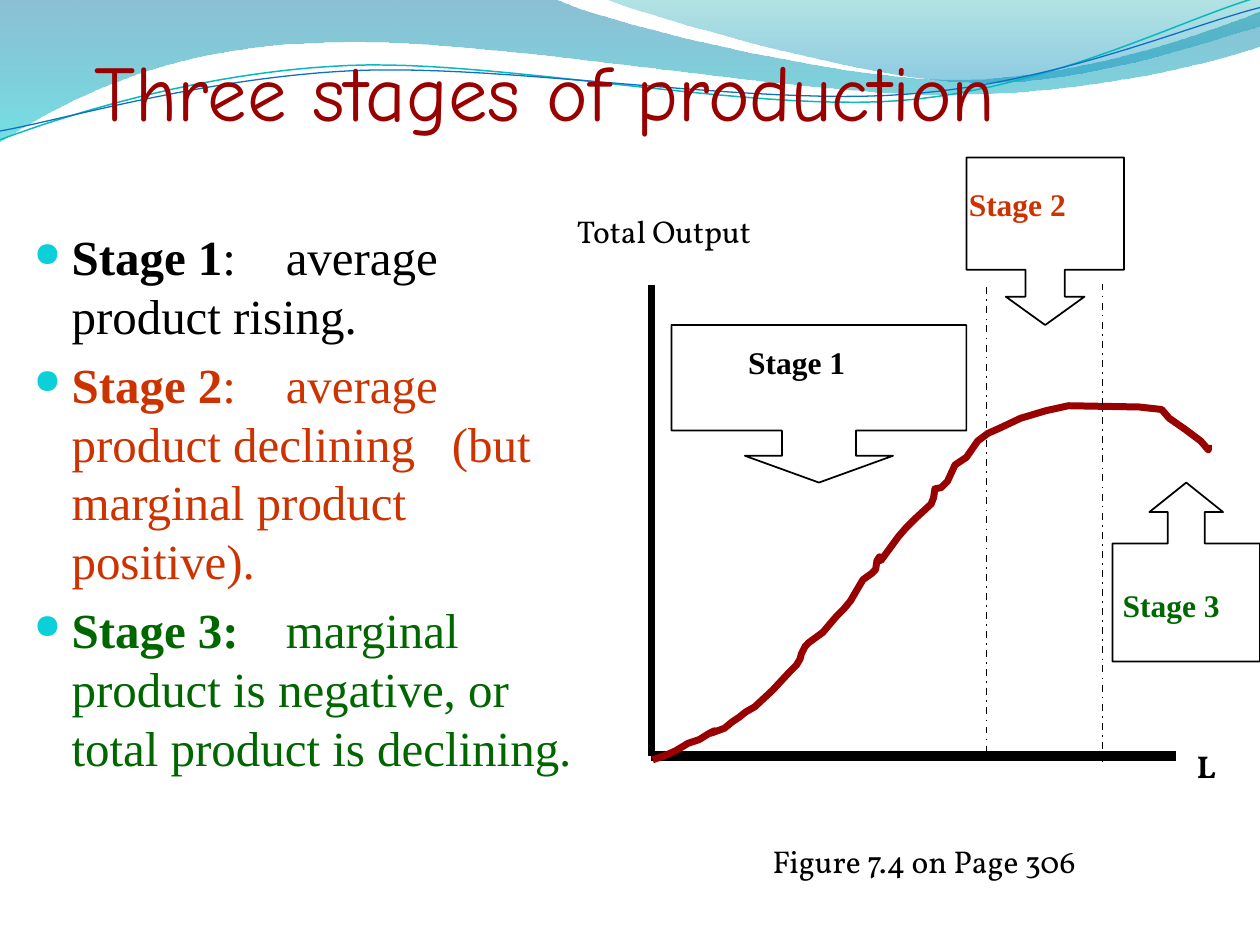
from lxml import etree
from pptx import Presentation
from pptx import util as u
from pptx.dml import color
from pptx.enum import dml, shapes, text
from pptx.oxml import ns

TIMES, VOLLKORN = "Times New Roman", "Vollkorn"
BLACK, RED, ORANGE, GREEN = "000000", "990000", "CC3300", "006600"

WAVE_LEFT = [(0, 0), (4.4, -0.01), (4.76, 0.17, 6.64, 0.63, 7.58, 0.63),
             (8.53, 0.63, 9.58, 0.26, 10, 0.09), (10.01, 0.36),
             (9.83, 0.44, 8.7, 0.76, 7.46, 0.75), (6.22, 0.75, 3.82, 0.28, 2.57, 0.34),
             (1.29, 0.36, 0.46, 0.83, -0.01, 1.13)]
WAVE_RIGHT = [(4.79, -0.01), (5.09, 0.11, 6.82, 0.62, 7.69, 0.65),
              (8.56, 0.69, 9.61, 0.32, 10, 0.21), (10, 0)]
RIPPLE_TEAL = [(0, 1.11), (0.48, 0.93, 1.58, 0.57, 2.77, 0.52),
               (3.95, 0.47, 5.93, 0.89, 7.13, 0.8), (8.33, 0.71, 9.38, 0.15, 9.98, -0.02)]
RIPPLE_BLUE = [(0, 1.04), (0.47, 0.96, 1.64, 0.61, 2.83, 0.56),
               (4.03, 0.51, 5.97, 0.84, 7.17, 0.75), (8.36, 0.67, 9.41, 0.21, 10, 0.06)]
OUTPUT_CURVE = [
    (5.18, 6.03), (5.27, 6), (5.36, 5.96), (5.41, 5.93), (5.46, 5.9), (5.55, 5.87),
    (5.63, 5.82), (5.67, 5.8), (5.64, 5.82), (5.75, 5.78), (5.81, 5.73), (5.87, 5.69),
    (5.92, 5.65), (5.99, 5.61), (6.13, 5.48), (6.26, 5.34), (6.32, 5.28), (6.35, 5.23),
    (6.36, 5.19), (6.39, 5.13), (6.42, 5.1), (6.53, 5.02), (6.64, 4.89), (6.7, 4.83),
    (6.75, 4.77), (6.82, 4.65), (6.85, 4.6), (6.92, 4.55), (6.95, 4.52), (6.96, 4.45),
    (6.98, 4.42), (6.99, 4.45), (7.02, 4.41), (7.13, 4.26), (7.19, 4.19), (7.26, 4.12),
    (7.39, 4), (7.41, 3.95), (7.42, 3.88), (7.47, 3.87), (7.52, 3.82), (7.58, 3.69),
    (7.67, 3.63), (7.76, 3.5), (7.84, 3.44), (7.93, 3.4), (8.1, 3.32), (8.3, 3.26),
    (8.48, 3.22), (9.04, 3.23), (9.22, 3.25), (9.28, 3.32), (9.41, 3.41), (9.53, 3.5),
    (9.59, 3.57), (9.59, 3.53)]


def rgb(value):
    return color.RGBColor.from_string(value)


def flatten(segments, steps=24):
    points = [segments[0]]
    for segment in segments[1:]:
        if len(segment) == 2:
            points.append(segment)
            continue
        start, controls = points[-1], (segment[:2], segment[2:4], segment[4:])
        for step in range(1, steps + 1):
            t = step / steps
            weights = ((1 - t) ** 3, 3 * t * (1 - t) ** 2, 3 * t * t * (1 - t), t ** 3)
            points.append(tuple(
                sum(w * p[axis] for w, p in zip(weights, (start, *controls)))
                for axis in (0, 1)))
    return points


def add_path(slide, segments, close=False):
    points = [(u.Inches(x), u.Inches(y)) for x, y in flatten(segments)]
    builder = slide.shapes.build_freeform(*points[0])
    builder.add_line_segments(points[1:], close=close)
    shape = builder.convert_to_shape()
    shape.shadow.inherit = False
    return shape


def set_line(shape, line_color, width):
    shape.line.color.rgb = rgb(line_color)
    shape.line.width = u.Pt(width)


def add_wave(slide, segments, stops):
    shape = add_path(slide, segments, close=True)
    shape.line.fill.background()
    shape.fill.gradient()
    shape.fill.gradient_angle = 270
    for stop, (value, opacity) in zip(shape.fill.gradient_stops, stops):
        stop.color.rgb = rgb(value)
    for element, (value, opacity) in zip(shape.element.iter(ns.qn("a:srgbClr")), stops):
        etree.SubElement(element, ns.qn("a:alpha"), val=str(opacity * 1000))


def add_stroke(slide, segments, line_color, width):
    shape = add_path(slide, segments)
    shape.fill.background()
    set_line(shape, line_color, width)


def add_line(slide, start, end, width, dash=None):
    points = [u.Inches(value) for value in (*start, *end)]
    line = slide.shapes.add_connector(shapes.MSO_CONNECTOR.STRAIGHT, *points)
    set_line(line, BLACK, width)
    if dash:
        line.line.dash_style = dash
    etree.SubElement(line.element.spPr, ns.qn("a:effectLst"))


def add_frame(slide, box):
    frame = slide.shapes.add_textbox(*map(u.Inches, box)).text_frame
    frame.word_wrap = True
    return frame


def set_font(paragraph, name, size, value, bold=None):
    font = paragraph.font
    font.name, font.size, font.bold = name, u.Pt(size), bold
    font.color.rgb = rgb(value)


def add_label(slide, box, words, name=VOLLKORN, value=BLACK, bold=None, size=18):
    frame = add_frame(slide, box)
    paragraph = frame.paragraphs[0]
    paragraph.text = words
    set_font(paragraph, name, size, value, bold)
    return frame


def add_bullet(paragraph, value, heading, body):
    for words, bold in ((heading, True), (body, False)):
        run = paragraph.add_run()
        run.text, run.font.bold = words, bold
    set_font(paragraph, TIMES, 28, value)
    paragraph.space_before = u.Pt(5.6)
    properties = paragraph._p.get_or_add_pPr()
    properties.set("marL", str(u.Inches(0.3)))
    properties.set("indent", str(-u.Inches(0.3)))
    bullet = [etree.Element(ns.qn("a:buClr")),
              etree.Element(ns.qn("a:buSzPct"), val="70000"),
              etree.Element(ns.qn("a:buChar"), char="●")]
    etree.SubElement(bullet[0], ns.qn("a:srgbClr"), val="0BD0D9")
    properties.find(ns.qn("a:spcBef")).addnext(bullet[0])
    bullet[0].addnext(bullet[1])
    bullet[1].addnext(bullet[2])


def add_callout(slide, kind, box, adjustments):
    shape = slide.shapes.add_shape(kind, *map(u.Inches, box))
    for index, value in enumerate(adjustments):
        shape.adjustments[index] = value
    shape.shadow.inherit = False
    shape.fill.background()
    set_line(shape, BLACK, 1)


def main():
    presentation = Presentation()
    presentation.slide_width, presentation.slide_height = u.Inches(10), u.Inches(7.5)
    slide = presentation.slides.add_slide(presentation.slide_layouts[6])

    add_wave(slide, WAVE_LEFT, [("0074A1", 45), ("00C6CF", 55)])
    add_wave(slide, WAVE_RIGHT, [("00A1A9", 30), ("008BBF", 45)])
    add_stroke(slide, RIPPLE_TEAL, "0AB8BF", 0.85)
    add_stroke(slide, RIPPLE_BLUE, "0F6FC6", 0.75)

    caption = add_label(slide, (5.75, 6.58, 3.17, 0.5), "Figure 7.4 on Page 306")
    caption.vertical_anchor = text.MSO_ANCHOR.MIDDLE
    caption.paragraphs[0].alignment = text.PP_ALIGN.CENTER
    title = add_label(slide, (0.75, 0.42, 8.5, 0.67), "Three stages of production",
                      "Comic Neue", RED, size=45)
    title.vertical_anchor = text.MSO_ANCHOR.BOTTOM
    title.margin_left = title.margin_right = title.margin_bottom = 0

    stages = add_frame(slide, (0.17, 1.75, 4.5, 4.92))
    bullets = [
        (BLACK, "Stage 1", ":\taverage product rising."),
        (ORANGE, "Stage 2", ":\taverage product declining   (but marginal product positive)."),
        (GREEN, "Stage 3:", "\tmarginal product is negative, or total product is declining.")]
    for index, bullet in enumerate(bullets):
        paragraph = stages.add_paragraph() if index else stages.paragraphs[0]
        add_bullet(paragraph, *bullet)

    add_line(slide, (5.17, 2.26), (5.17, 6), 4)
    add_line(slide, (5.17, 6), (9.33, 6), 6)
    add_stroke(slide, OUTPUT_CURVE, RED, 4)
    add_label(slide, (9.4, 5.88, 0.42, 0.9), "L", bold=True)
    add_label(slide, (4.48, 1.63, 1.91, 0.5), "Total Output")
    for x, top, bottom in ((7.83, 2.28, 6.06), (8.75, 2.25, 6.04)):
        add_line(slide, (x, top), (x, bottom), 1, dml.MSO_LINE.DASH_DOT)

    add_label(slide, (5.84, 2.67, 1.4, 0.5), "Stage 1", TIMES, BLACK, True)
    add_label(slide, (7.59, 1.42, 1.38, 0.5), "Stage 2", TIMES, ORANGE, True)
    down = shapes.MSO_SHAPE.DOWN_ARROW_CALLOUT
    add_callout(slide, down, (7.67, 1.25, 1.25, 1.33), (0.25, 0.25, 0.18, 0.67))
    add_callout(slide, down, (5.33, 2.58, 2.34, 1.25), (0.47, 0.47, 0.17, 0.67))
    add_callout(slide, shapes.MSO_SHAPE.UP_ARROW_CALLOUT, (8.83, 3.83, 1.17, 1.42),
                (0.25, 0.25, 0.2, 0.66))
    add_label(slide, (8.75, 4.6, 1.2, 0.4), " Stage 3", TIMES, GREEN, True)

    presentation.save("out.pptx")


if __name__ == "__main__":
    main()
